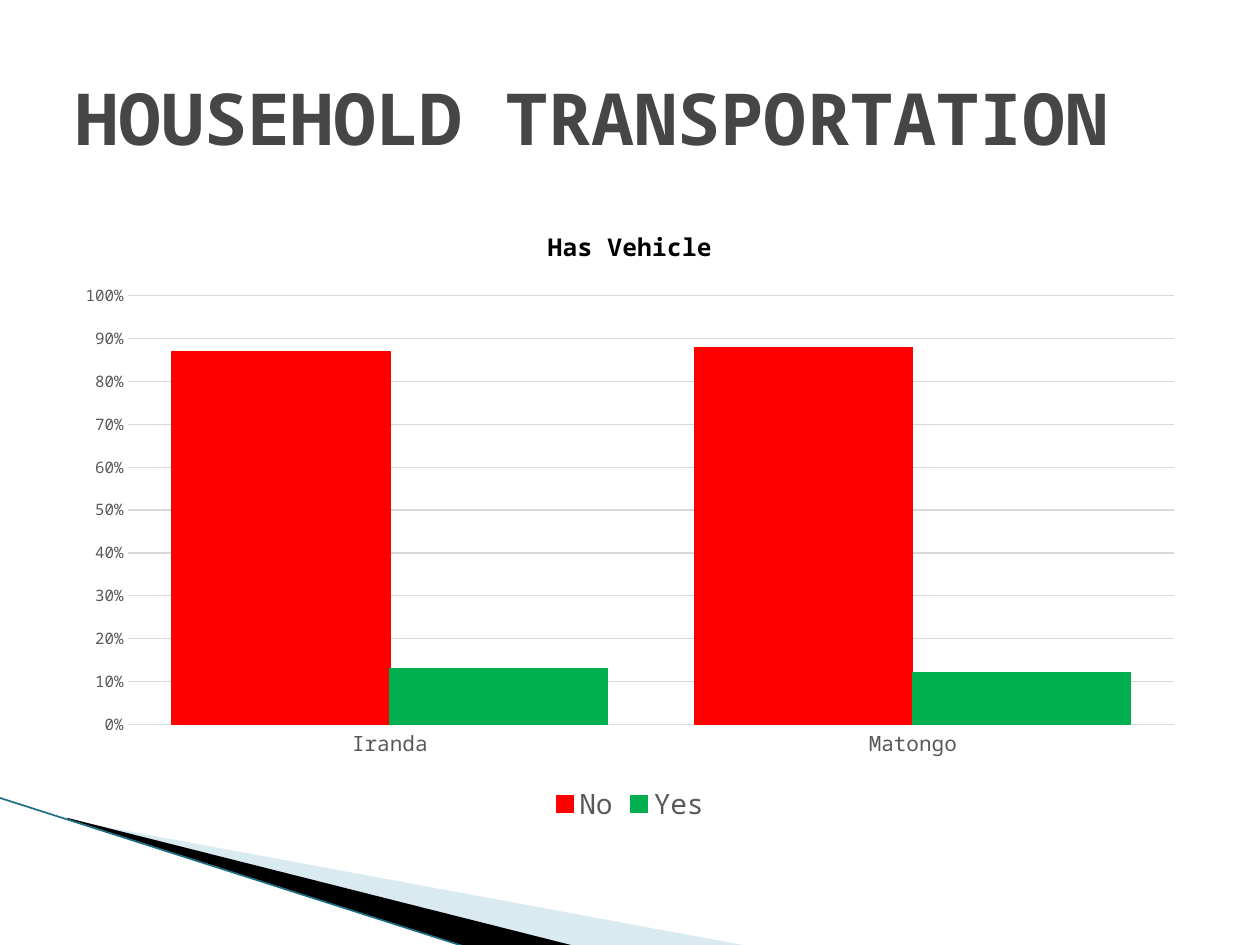
from lxml import etree
from pptx import Presentation
from pptx.chart.data import CategoryChartData
from pptx.dml.color import RGBColor
from pptx.enum.chart import XL_CHART_TYPE, XL_LEGEND_POSITION, XL_TICK_MARK
from pptx.enum.shapes import MSO_CONNECTOR
from pptx.enum.text import MSO_ANCHOR
from pptx.oxml.ns import qn
from pptx.util import Inches, Pt

COLUMNS = XL_CHART_TYPE.COLUMN_CLUSTERED
LEGEND_BOTTOM = XL_LEGEND_POSITION.BOTTOM
NO_TICK = XL_TICK_MARK.NONE
STRAIGHT = MSO_CONNECTOR.STRAIGHT
MIDDLE = MSO_ANCHOR.MIDDLE

FONT = "Noto Sans Mono"
BLACK = RGBColor(0x00, 0x00, 0x00)
TITLE_GREY = RGBColor(0x46, 0x46, 0x46)
LABEL_GREY = RGBColor(0x59, 0x59, 0x59)
GRID_GREY = RGBColor(0xD9, 0xD9, 0xD9)
PALE_BLUE = RGBColor(0xA0, 0xCB, 0xDC)
TEAL = RGBColor(0x1B, 0x6E, 0x85)
RED = RGBColor(0xFF, 0x00, 0x00)
GREEN = RGBColor(0x00, 0xB0, 0x50)


def style_font(font, size, color, bold=False):
    font.name = FONT
    font.size = Pt(size)
    font.bold = bold
    font.color.rgb = color


def style_line(line, color, width=0.75):
    line.color.rgb = color
    line.width = Pt(width)


def add_wedge(slide, points, color, opacity=100):
    corners = [(Inches(x), Inches(y)) for x, y in points]
    builder = slide.shapes.build_freeform(*corners[0], scale=1.0)
    builder.add_line_segments(corners[1:], close=True)
    sp = builder.convert_to_shape()
    sp.shadow.inherit = False
    sp.fill.solid()
    sp.fill.fore_color.rgb = color
    sp.line.fill.background()
    if opacity < 100:
        clr = sp.fill._xPr.find(".//" + qn("a:srgbClr"))
        etree.SubElement(clr, qn("a:alpha")).set("val", str(opacity * 1000))


def add_edge_line(slide, start, end, color, width):
    ends = [Inches(v) for v in (*start, *end)]
    line = slide.shapes.add_connector(STRAIGHT, *ends)
    style_line(line.line, color, width)
    etree.SubElement(line._element.spPr, qn("a:effectLst"))


def add_title(slide, text):
    box = slide.shapes.add_textbox(Inches(0.5), Inches(0.3), Inches(9), Inches(1.25))
    tf = box.text_frame
    tf.word_wrap = True
    tf.vertical_anchor = MIDDLE
    r = tf.paragraphs[0].add_run()
    r.text = text
    style_font(r.font, 41, TITLE_GREY, bold=True)


def style_axis(axis, size):
    axis.major_tick_mark = NO_TICK
    axis.minor_tick_mark = NO_TICK
    style_font(axis.tick_labels.font, size, LABEL_GREY)


def add_vehicle_chart(slide):
    data = CategoryChartData(number_format="0%")
    data.categories = ["Iranda", "Matongo"]
    data.add_series("No", (0.87, 0.88))
    data.add_series("Yes", (0.13, 0.12))
    chart = slide.shapes.add_chart(
        COLUMNS, Inches(0.5), Inches(1.62), Inches(9), Inches(4.95), data
    ).chart
    style_font(chart.font, 10, BLACK)

    chart.has_title = True
    r = chart.chart_title.text_frame.paragraphs[0].add_run()
    r.text = "Has Vehicle"
    style_font(r.font, 14, BLACK, bold=True)
    chart.chart_title.include_in_layout = False

    chart.has_legend = True
    chart.legend.position = LEGEND_BOTTOM
    chart.legend.include_in_layout = False
    style_font(chart.legend.font, 16, LABEL_GREY)

    style_axis(chart.category_axis, 12)
    style_line(chart.category_axis.format.line, GRID_GREY)

    values = chart.value_axis
    style_axis(values, 9)
    values.minimum_scale, values.maximum_scale, values.major_unit = 0, 1, 0.1
    values.tick_labels.number_format = "0%"
    values.tick_labels.number_format_is_linked = False
    values.format.line.fill.background()
    values.has_major_gridlines = True
    style_line(values.major_gridlines.format.line, GRID_GREY)

    plot = chart.plots[0]
    plot.vary_by_categories = False
    plot.gap_width = 40
    plot.overlap = 0
    for series, color in zip(plot.series, (RED, GREEN)):
        series.format.fill.solid()
        series.format.fill.fore_color.rgb = color
        style_line(series.format.line, color)


def main():
    prs = Presentation()
    prs.slide_width, prs.slide_height = Inches(10), Inches(7.5)
    slide = prs.slides.add_slide(prs.slide_layouts[6])
    add_wedge(slide, [(0.55, 6.51), (5.95, 7.51), (4.56, 7.51), (0.55, 6.5)],
              PALE_BLUE, opacity=40)
    add_wedge(slide, [(0.53, 6.49), (4.57, 7.51), (3.72, 7.52), (0.54, 6.5)], BLACK)
    add_edge_line(slide, (-0.01, 6.33), (3.71, 7.52), TEAL, 0.95)
    add_title(slide, "HOUSEHOLD TRANSPORTATION")
    add_vehicle_chart(slide)
    prs.save("out.pptx")


if __name__ == "__main__":
    main()
